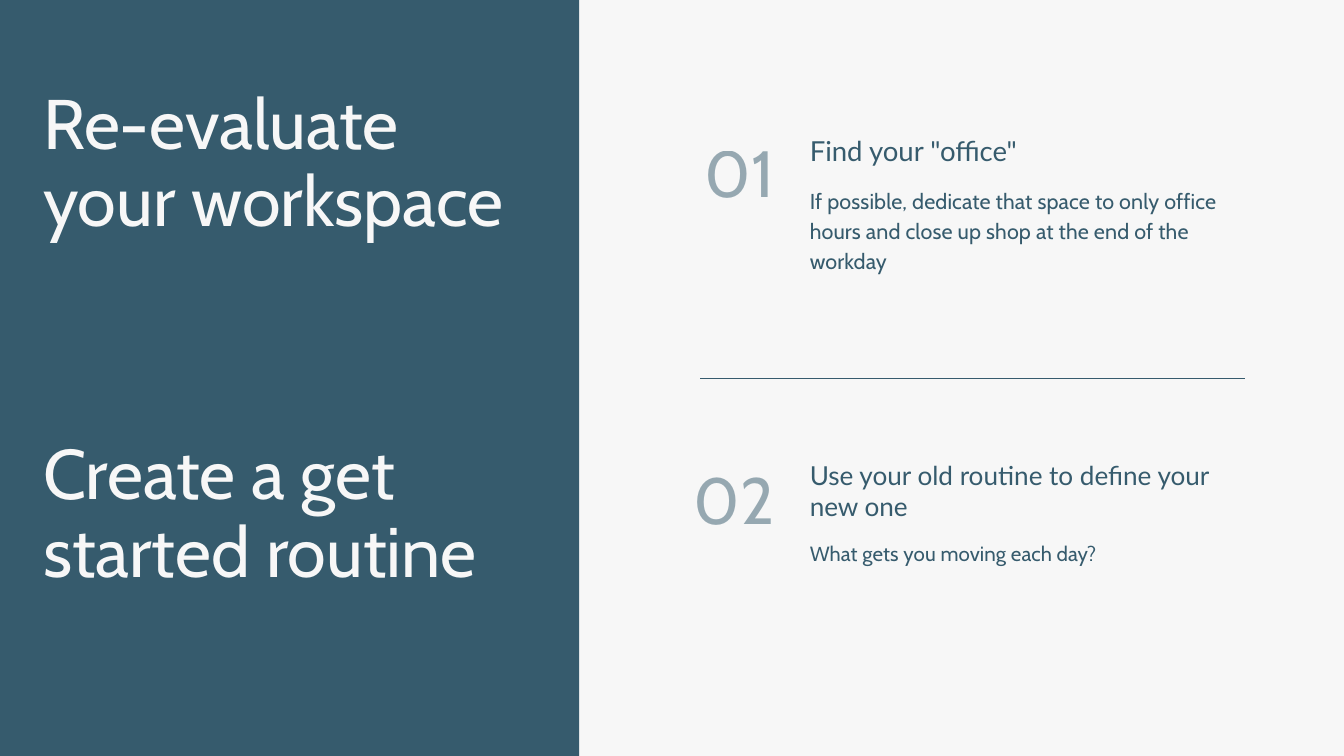
"""Build a slide pairing two headings with two numbered tips."""

from dataclasses import dataclass

import lxml.etree
import pptx
import pptx.dml.color
import pptx.enum.shapes
import pptx.enum.text
import pptx.oxml.ns
import pptx.presentation
import pptx.shapes.autoshape
import pptx.slide
import pptx.util

Pt = pptx.util.Pt
Align = pptx.enum.text.PP_ALIGN
qn = pptx.oxml.ns.qn


@dataclass(frozen=True)
class TextStyle:
    font: str
    size: float
    line: float
    color: str
    tracking: int = 0
    opacity: int = 100
    align: Align = Align.LEFT


@dataclass(frozen=True)
class Theme:
    teal: str = "365B6D"
    paper: str = "F7F7F7"
    heading: TextStyle = TextStyle("Cabin", 75.2, 82.7, "F7F7F7")
    number: TextStyle = TextStyle("Cabin", 70, 77, "365B6D", 30, 50, Align.RIGHT)
    tip_large: TextStyle = TextStyle("Lato", 29.5, 35.4, "365B6D")
    detail_large: TextStyle = TextStyle("Cabin", 23.1, 32.4, "365B6D", 10)
    tip_small: TextStyle = TextStyle("Lato", 28, 33.6, "365B6D")
    detail_small: TextStyle = TextStyle("Cabin", 22, 30.8, "365B6D", 10)


@dataclass(frozen=True)
class Box:
    left: float
    top: float
    width: float
    height: float


@dataclass(frozen=True)
class Tip:
    number: str
    number_top: float
    title: str
    title_box: Box
    title_style: TextStyle
    detail: str
    detail_box: Box
    detail_style: TextStyle


THEME = Theme()
SLIDE_WIDTH, SLIDE_HEIGHT = 1440, 810
PANEL_WIDTH = 620.6
HEADING_LEFT, HEADING_WIDTH = 46.1, 529.2
NUMBER_LEFT, NUMBER_WIDTH, NUMBER_HEIGHT = 720, 110.2, 79.2
TIP_LEFT = 867.6
DIVIDER_LEFT, DIVIDER_RIGHT, DIVIDER_TOP = 750.2, 1334.2, 405
FRAME_FORMAT = {
    "margin_left": 0,
    "margin_top": 0,
    "margin_right": 0,
    "margin_bottom": 0,
    "word_wrap": True,
    "auto_size": pptx.enum.text.MSO_AUTO_SIZE.NONE,
    "vertical_anchor": pptx.enum.text.MSO_ANCHOR.TOP,
}

TIPS = (
    Tip("01", 149, 'Find your "office"', Box(TIP_LEFT, 144, 491, 35.3), THEME.tip_large,
        "If possible, dedicate that space to only office hours and close up shop "
        "at the end of the workday",
        Box(TIP_LEFT, 196.6, 491, 93.6), THEME.detail_large),
    Tip("02", 499, "Use your old routine to define your new one",
        Box(TIP_LEFT, 491.8, 466.6, 66.2), THEME.tip_small,
        "What gets you moving each day?",
        Box(TIP_LEFT, 575.3, 466.6, 58.3), THEME.detail_small),
)


def rgb(color: str) -> pptx.dml.color.RGBColor:
    """Turn a hex string into a colour."""
    return pptx.dml.color.RGBColor.from_string(color)


def write(shape: pptx.shapes.autoshape.Shape, box: Box, words: str, style: TextStyle) -> None:
    """Place a text shape and fill it with one styled paragraph."""
    for side in ("left", "top", "width", "height"):
        setattr(shape, side, Pt(getattr(box, side)))
    frame = shape.text_frame
    for name, value in FRAME_FORMAT.items():
        setattr(frame, name, value)
    paragraph = frame.paragraphs[0]
    for name, value in {"alignment": style.align, "line_spacing": Pt(style.line)}.items():
        setattr(paragraph, name, value)
    run = paragraph.add_run()
    run.text = words
    for name, value in {"name": style.font, "size": Pt(style.size)}.items():
        setattr(run.font, name, value)
    run.font.color.rgb = rgb(style.color)
    properties = run.font._element
    if style.tracking:
        properties.set("spc", str(style.tracking))
    if style.opacity < 100:
        solid_color = properties.find(f".//{qn('a:srgbClr')}")
        lxml.etree.SubElement(solid_color, qn("a:alpha"), val=str(style.opacity * 1000))


def add_text(slide: pptx.slide.Slide, box: Box, words: str, style: TextStyle) -> None:
    """Add a text box with one styled paragraph."""
    write(slide.shapes.add_textbox(0, 0, 0, 0), box, words, style)


def add_panel(slide: pptx.slide.Slide) -> None:
    """Add the dark left panel behind the title."""
    panel = slide.shapes.add_shape(
        pptx.enum.shapes.MSO_SHAPE.RECTANGLE, 0, 0, Pt(PANEL_WIDTH), Pt(SLIDE_HEIGHT))
    panel.shadow.inherit = False
    panel.fill.solid()
    panel.fill.fore_color.rgb = rgb(THEME.teal)
    panel.line.fill.background()
    slide.shapes.title.element.addprevious(panel.element)


def add_divider(slide: pptx.slide.Slide) -> None:
    """Add the thin rule between the tips."""
    divider = slide.shapes.add_connector(
        pptx.enum.shapes.MSO_CONNECTOR.STRAIGHT,
        Pt(DIVIDER_LEFT), Pt(DIVIDER_TOP), Pt(DIVIDER_RIGHT), Pt(DIVIDER_TOP))
    divider.line.width = Pt(0.75)
    divider.line.color.rgb = rgb(THEME.teal)
    lxml.etree.SubElement(divider.element.spPr, qn("a:effectLst"))


def add_tip(slide: pptx.slide.Slide, tip: Tip) -> None:
    """Add a number with its tip and detail."""
    add_text(slide, tip.title_box, tip.title, tip.title_style)
    add_text(slide, tip.detail_box, tip.detail, tip.detail_style)
    number_box = Box(NUMBER_LEFT, tip.number_top, NUMBER_WIDTH, NUMBER_HEIGHT)
    add_text(slide, number_box, tip.number, THEME.number)


def main() -> None:
    """Build and save the presentation."""
    deck: pptx.presentation.Presentation = pptx.Presentation()
    deck.slide_width, deck.slide_height = Pt(SLIDE_WIDTH), Pt(SLIDE_HEIGHT)
    slide = deck.slides.add_slide(deck.slide_layouts.get_by_name("Title Only"))
    slide.background.fill.solid()
    slide.background.fill.fore_color.rgb = rgb(THEME.paper)
    add_panel(slide)
    add_divider(slide)
    write(slide.shapes.title, Box(HEADING_LEFT, 92.2, HEADING_WIDTH, 249.1),
          "Re-evaluate your workspace", THEME.heading)
    for tip in TIPS:
        add_tip(slide, tip)
    add_text(slide, Box(HEADING_LEFT, 468, HEADING_WIDTH, 166.3),
             "Create a get started routine", THEME.heading)
    deck.save("out.pptx")


if __name__ == "__main__":
    main()
